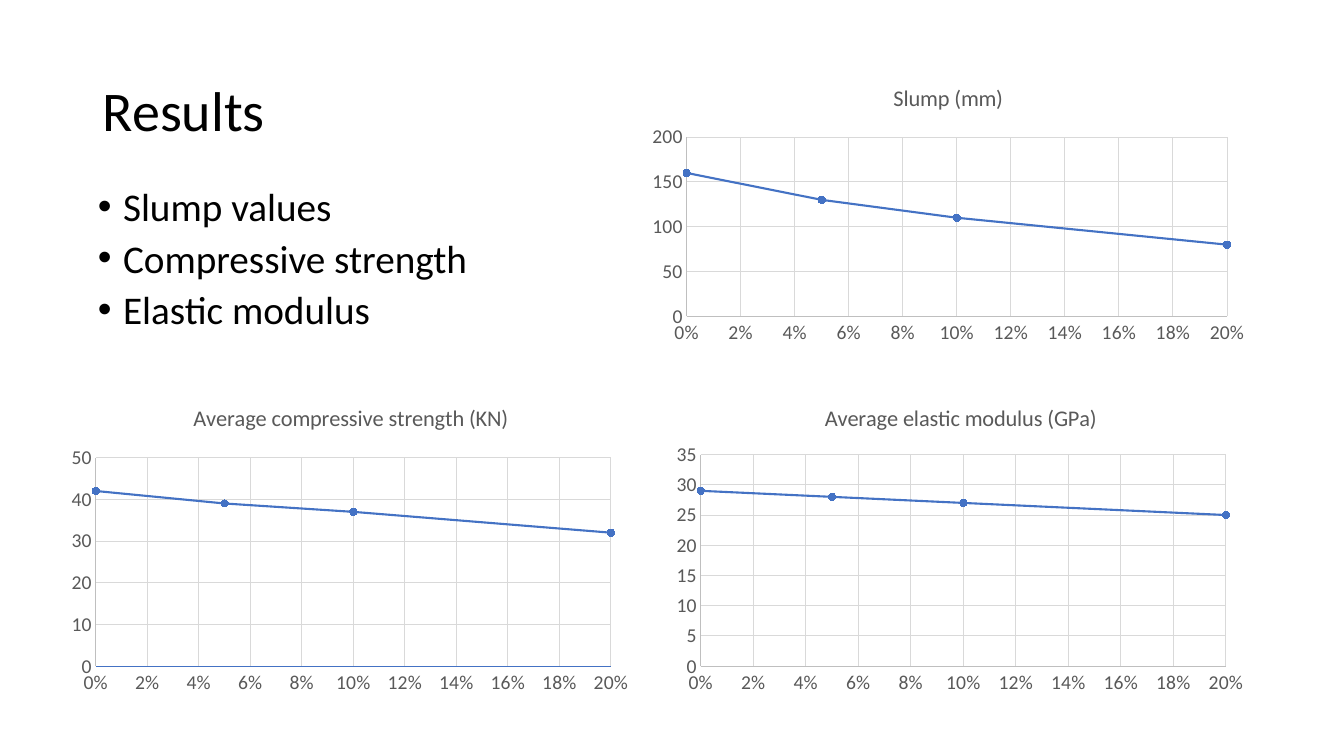
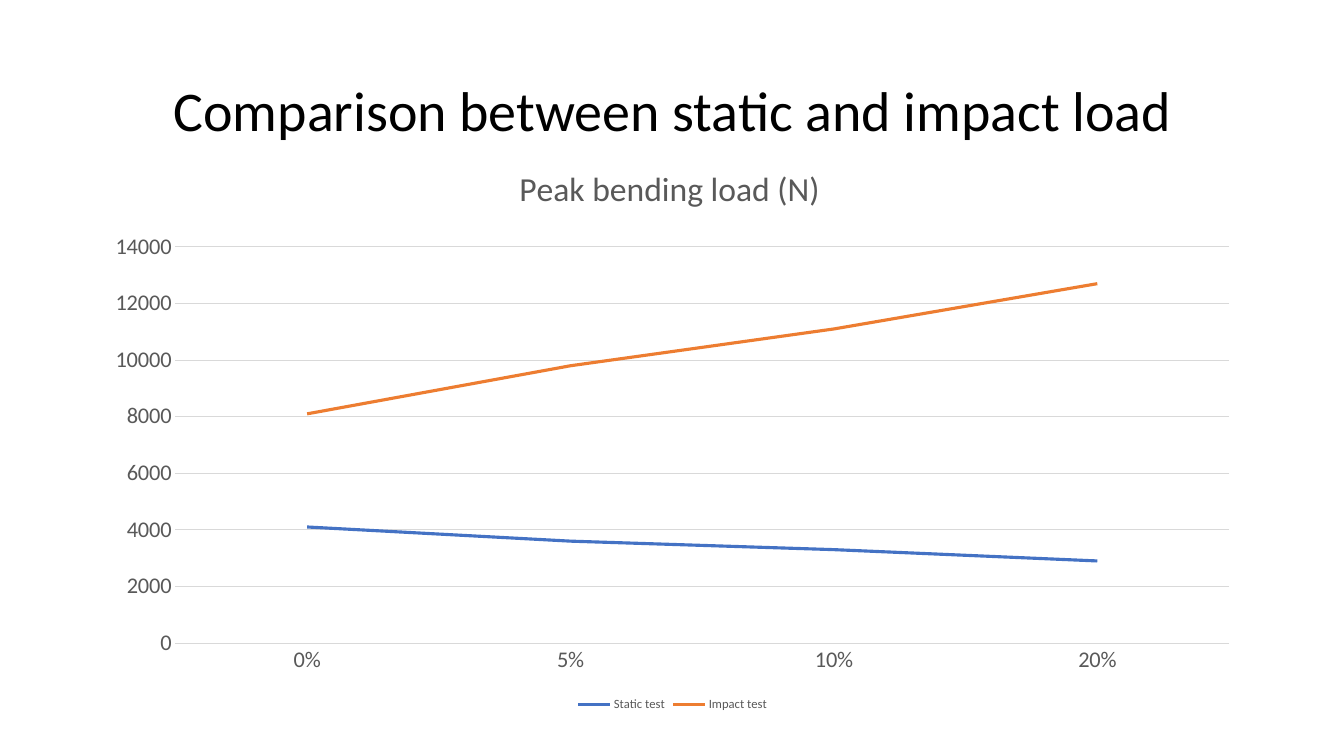
import pptx
import pptx.chart.data
import pptx.dml.color
import pptx.enum.chart
import pptx.enum.text
import pptx.oxml
import pptx.oxml.ns
import pptx.util
from pptx.util import Inches

BLACK = pptx.dml.color.RGBColor(0x00, 0x00, 0x00)
GRAY = pptx.dml.color.RGBColor(0x59, 0x59, 0x59)
AXIS_GRAY = pptx.dml.color.RGBColor(0xBF, 0xBF, 0xBF)
GRID_GRAY = pptx.dml.color.RGBColor(0xD9, 0xD9, 0xD9)
BLUE = pptx.dml.color.RGBColor(0x44, 0x72, 0xC4)
ORANGE = pptx.dml.color.RGBColor(0xED, 0x7D, 0x31)
FONT = "Calibri"
ALIGN = pptx.enum.text.PP_ALIGN
CHART_TYPE = pptx.enum.chart.XL_CHART_TYPE


def set_font(font, size, color):
    font.name = FONT
    font.size = pptx.util.Pt(size)
    font.bold = False
    font.color.rgb = color


def add_styled_chart(slide, kind, box, plot_box, data, title, title_size,
                     label_size, maximum, unit, title_corner=None):
    chart = slide.shapes.add_chart(kind, *map(Inches, box), data).chart
    set_font(chart.font, 10, BLACK)
    chart.has_legend = False
    chart.has_title = True
    run = chart.chart_title.text_frame.paragraphs[0].add_run()
    run.text = title
    set_font(run.font, title_size, GRAY)
    for axis, has_grid in ((chart.category_axis, kind == CHART_TYPE.XY_SCATTER_LINES),
                           (chart.value_axis, True)):
        axis.major_tick_mark = pptx.enum.chart.XL_TICK_MARK.NONE
        axis.minor_tick_mark = pptx.enum.chart.XL_TICK_MARK.NONE
        set_font(axis.tick_labels.font, label_size, GRAY)
        axis.format.line.width = pptx.util.Pt(0.75)
        axis.format.line.color.rgb = AXIS_GRAY
        axis.has_major_gridlines = has_grid
        if has_grid:
            axis.major_gridlines.format.line.width = pptx.util.Pt(0.75)
            axis.major_gridlines.format.line.color.rgb = GRID_GRAY
    chart.value_axis.minimum_scale = 0
    chart.value_axis.maximum_scale = maximum
    chart.value_axis.major_unit = unit
    chart.plots[0].vary_by_categories = False
    left, top, width, height = box
    for tag, index, target, frame in (
            ("c:plotArea", 0, '<c:layoutTarget val="inner"/>', plot_box),
            ("c:title", 1, "", title_corner)):
        if frame is None:
            continue
        parent = chart.element.find(".//" + pptx.oxml.ns.qn(tag))
        for layout in parent.findall(pptx.oxml.ns.qn("c:layout")):
            parent.remove(layout)
        fractions = [(frame[0] - left) / width, (frame[1] - top) / height]
        if len(frame) == 4:
            fractions += [frame[2] / width, frame[3] / height]
        entries = "".join(f'<c:{name} val="{value:.4f}"/>'
                          for name, value in zip("xywh", fractions))
        parent.insert(index, pptx.oxml.parse_xml(
            f'<c:layout {pptx.oxml.ns.nsdecls("c")}><c:manualLayout>{target}'
            '<c:xMode val="edge"/><c:yMode val="edge"/>'
            f'{entries}</c:manualLayout></c:layout>'))
    return chart


presentation = pptx.Presentation()
presentation.slide_width = Inches(13.33)
presentation.slide_height = Inches(7.5)

slides = []
for layout_index, title, alignment in (
        (1, "Results", ALIGN.LEFT),
        (5, "Comparison between static and impact load", ALIGN.CENTER)):
    slide = presentation.slides.add_slide(presentation.slide_layouts[layout_index])
    shape = slide.shapes.title
    shape.left, shape.top, shape.width, shape.height = map(
        Inches, (0.92, 0.4, 11.5, 1.45))
    shape.text_frame.auto_size = pptx.enum.text.MSO_AUTO_SIZE.NONE
    shape.text_frame.vertical_anchor = pptx.enum.text.MSO_ANCHOR.MIDDLE
    paragraph = shape.text_frame.paragraphs[0]
    paragraph.alignment = alignment
    paragraph.line_spacing = 0.9
    run = paragraph.add_run()
    run.text = title
    set_font(run.font, 40, BLACK)
    slides.append(slide)
results_slide, comparison_slide = slides

body = results_slide.placeholders[1]
body.left, body.top, body.width, body.height = map(Inches, (0.87, 1.85, 4.36, 1.63))
body.text_frame.auto_size = pptx.enum.text.MSO_AUTO_SIZE.NONE
for index, item in enumerate(("Slump values", "Compressive strength", "Elastic modulus")):
    paragraph = (body.text_frame.add_paragraph() if index
                 else body.text_frame.paragraphs[0])
    paragraph.line_spacing = 0.8
    paragraph.space_before = pptx.util.Pt(10)
    properties = paragraph._p.get_or_add_pPr()
    properties.set("marL", str(Inches(0.25)))
    properties.set("indent", str(Inches(-0.25)))
    run = paragraph.add_run()
    run.text = item
    set_font(run.font, 28, BLACK)

for title, box, plot_box, values, maximum, unit, base_color in (
        ("Slump (mm)", (6.35, 0.67, 6.11, 2.81), (6.81, 1.36, 5.36, 1.78),
         (160, 130, 110, 80), 200, 50, AXIS_GRAY),
        ("Average compressive strength (KN)", (0.6, 3.84, 5.76, 3.12),
         (0.95, 4.54, 5.11, 2.07), (42, 39, 37, 32), 50, 10, BLUE),
        ("Average elastic modulus (GPa)", (6.6, 3.84, 5.86, 3.12),
         (6.95, 4.51, 5.21, 2.1), (29, 28, 27, 25), 35, 5, AXIS_GRAY)):
    data = pptx.chart.data.XyChartData()
    points = data.add_series("Series 1")
    for share, value in zip((0, 0.05, 0.1, 0.2), values):
        points.add_data_point(share, value)
    chart = add_styled_chart(results_slide, CHART_TYPE.XY_SCATTER_LINES, box, plot_box,
                             data, title, 16, 14, maximum, unit)
    share_axis = chart.category_axis
    share_axis.minimum_scale = 0
    share_axis.maximum_scale = 0.2
    share_axis.major_unit = 0.02
    share_axis.tick_labels.number_format = "0%"
    share_axis.tick_labels.number_format_is_linked = False
    share_axis.format.line.color.rgb = base_color
    series = chart.plots[0].series[0]
    series.smooth = False
    series.format.line.width = pptx.util.Pt(1.5)
    series.format.line.color.rgb = BLUE
    series.marker.style = pptx.enum.chart.XL_MARKER_STYLE.CIRCLE
    series.marker.size = 5
    series.marker.format.fill.solid()
    series.marker.format.fill.fore_color.rgb = BLUE
    series.marker.format.line.color.rgb = BLUE

data = pptx.chart.data.CategoryChartData()
data.categories = ("0%", "5%", "10%", "20%")
data.add_series("Static test", (4100, 3600, 3300, 2900))
data.add_series("Impact test", (8100, 9800, 11100, 12700))
chart = add_styled_chart(comparison_slide, CHART_TYPE.LINE, (0.92, 1.53, 11.5, 5.57),
                         (1.74, 2.45, 10.45, 3.93), data, "Peak bending load (N)",
                         24, 16, 14000, 2000, title_corner=(5.09, 1.59))
chart.category_axis.format.line.color.rgb = GRID_GRAY
chart.value_axis.format.line.fill.background()
chart.has_legend = True
chart.legend.position = pptx.enum.chart.XL_LEGEND_POSITION.BOTTOM
chart.legend.include_in_layout = False
set_font(chart.legend.font, 9, GRAY)
for series, color in zip(chart.plots[0].series, (BLUE, ORANGE)):
    series.smooth = False
    series.format.line.width = pptx.util.Pt(2.25)
    series.format.line.color.rgb = color
    series.marker.style = pptx.enum.chart.XL_MARKER_STYLE.NONE

presentation.save("out.pptx")
